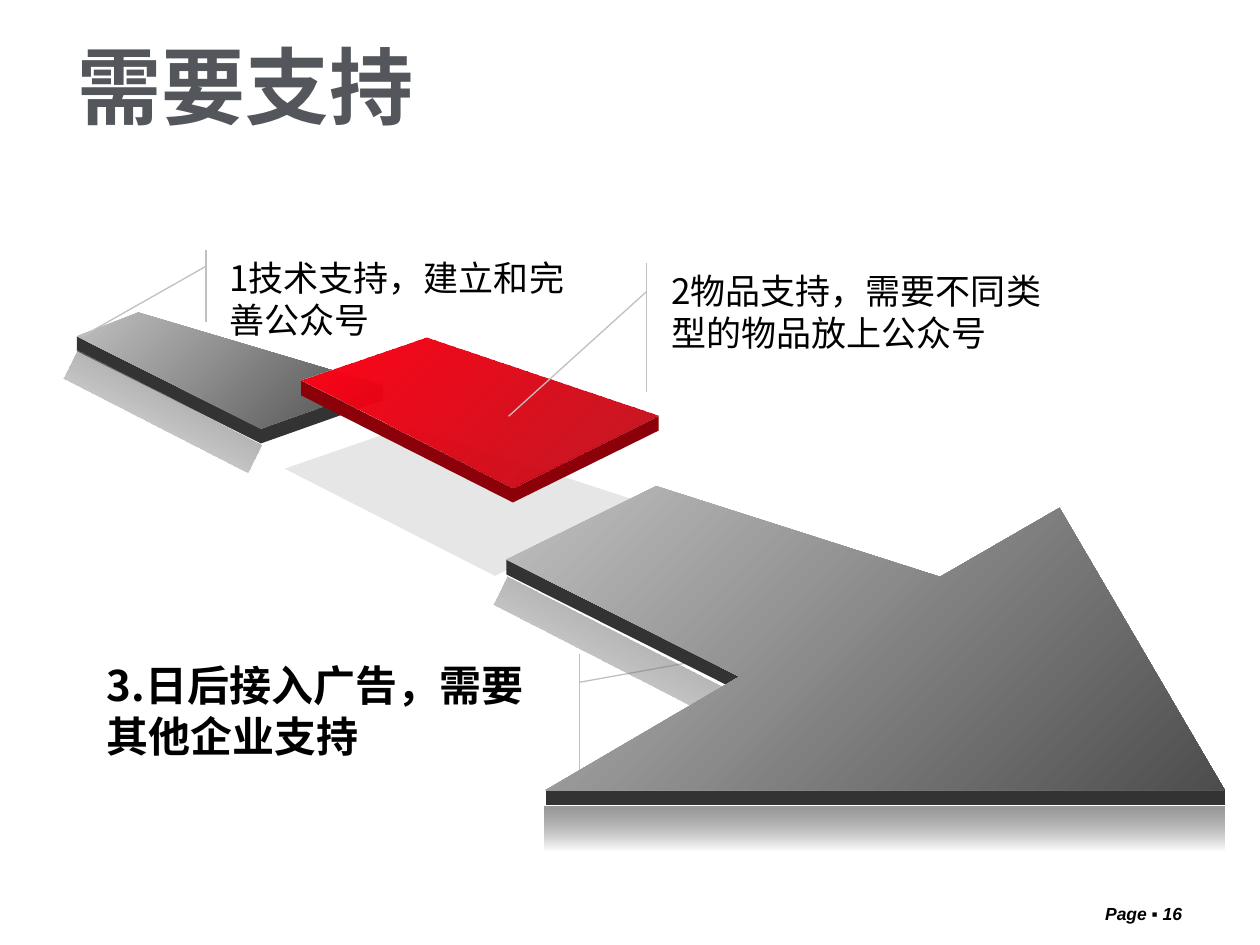
from lxml import etree
from pptx import Presentation
from pptx.dml.color import RGBColor
from pptx.enum.shapes import MSO_SHAPE
from pptx.enum.text import MSO_ANCHOR, MSO_AUTO_SIZE, PP_ALIGN
from pptx.oxml.ns import qn
from pptx.util import Cm, Pt

RECT = MSO_SHAPE.RECTANGLE
CALLOUT = MSO_SHAPE.LINE_CALLOUT_1_ACCENT_BAR
LEFT, RIGHT = PP_ALIGN.LEFT, PP_ALIGN.RIGHT
TOP, MIDDLE = MSO_ANCHOR.TOP, MSO_ANCHOR.MIDDLE

THEME = {
    "han": "Noto Sans CJK JP", "latin": "Arial",
    "title": 48, "note": 20, "strong": 24, "foot": 10,
    "head": "53575C", "ink": "000000", "line": "C0C0C0",
    # gradient stops: position, colour, opacity in percent
    "grey": [(0, "C0C0C0", 100), (100, "4D4D4D", 100)],
    "red": [(0, "FF0517", 100), (100, "BC000D", 90)],
    "fade": [(0, "5F5F5F", 0), (100, "969696", 100)],
    "floor": [(0, "C0C0C0", 38), (100, "C0C0C0", 38)],
    "grey side": "333333", "red side": "8B0009",
}

TITLE = ("需要支持", (1.3, 0.89, 16.2, 1.65))
FOOT = ("Page ▪ 16", (20.09, 18.14, 3.99, 0.56))

# Top faces in cm, from the left corner along the front edge and back
STEP_1 = [(1.55, 6.78), (5.26, 8.64), (7.72, 7.77), (2.79, 6.3)]
STEP_2 = [(6.07, 7.67), (10.34, 9.83), (13.28, 8.38), (8.59, 6.81)]
FLOOR = [(5.74, 9.45), (9.98, 11.61), (12.95, 10.13), (8.23, 8.59)]
ARROW = [(10.21, 11.28), (14.91, 13.64), (11, 15.93), (24.69, 15.93),
         (21.36, 10.24), (18.95, 11.63), (13.23, 9.8)]
THICK = 0.3

# Box and turn of each reflection
GLOW_1 = ((1.19, 7.98, 4.17, 0.64), 207)
GLOW_2 = ((9.8, 12.83, 5.46, 0.64), 207)
GLOW_3 = ((10.97, 16.26, 13.72, 0.89), 180)

# Text, box, pointer (y, x, y, x as shares of the box), size, bold
RIGHTWARD = (0.22, -0.03, 1.19, -0.37)
NOTES = [
    ("1技术支持，建立和完善公众号", (4.37, 5.05, 7.29, 1.45),
     (0.22, -0.03, 1.19, -0.37), "note", False),
    ("2物品支持，需要不同类型的物品放上公众号", (13.28, 5.31, 8.18, 2.59),
     (0.22, -0.03, 1.19, -0.37), "note", False),
    ("3.日后接入广告，需要其他企业支持", (1.9, 13.18, 9.4, 2.62),
     (0.22, 1.04, 0.02, 1.35), "strong", True),
]
NOTES = [n for n in NOTES]


def rgb(name):
    return RGBColor.from_string(THEME[name])


def blend(shape, name, angle):
    """Fill with a linear gradient whose stops may be transparent."""
    shape.fill.gradient()
    grad = shape._element.spPr.find(qn("a:gradFill"))
    stops = grad.find(qn("a:gsLst"))
    for old in list(stops):
        stops.remove(old)
    for place, color, solid in THEME[name]:
        stop = etree.SubElement(stops, qn("a:gs"), pos=str(place * 1000))
        tint = etree.SubElement(stop, qn("a:srgbClr"), val=color)
        if solid < 100:
            etree.SubElement(tint, qn("a:alpha"), val=str(solid * 1000))
    grad.find(qn("a:lin")).set("ang", str(angle * 60000))


def face(slide, points):
    dots = [(Cm(x), Cm(y)) for x, y in points]
    pen = slide.shapes.build_freeform(*dots[0])
    pen.add_line_segments(dots[1:], close=True)
    shape = pen.convert_to_shape()
    shape.shadow.inherit = False
    shape.line.fill.background()
    return shape


def slab(slide, points, name):
    """Draw a top face over the sides below its rightward edges."""
    for (x1, y1), (x2, y2) in zip(points, points[1:]):
        if x2 > x1:
            side = face(slide, [(x1, y1), (x2, y2),
                                (x2, y2 + THICK), (x1, y1 + THICK)])
            side.fill.solid()
            side.fill.fore_color.rgb = rgb(name + " side")
    blend(face(slide, points), name, 45)


def glow(slide, box, turn):
    shape = slide.shapes.add_shape(RECT, *map(Cm, box))
    shape.shadow.inherit = False
    shape.line.fill.background()
    shape.rotation = turn
    blend(shape, "fade", 90)


def write(shape, text, size, color="ink", face_name="han", bold=True,
          italic=False, align=LEFT, anchor=TOP):
    frame = shape.text_frame
    frame.word_wrap = True
    frame.auto_size = MSO_AUTO_SIZE.NONE
    frame.vertical_anchor = anchor
    frame.text = text
    para = frame.paragraphs[0]
    para.alignment = align
    font = para.font
    font.size, font.bold, font.italic = Pt(THEME[size]), bold, italic
    font.color.rgb = rgb(color)
    font.name = THEME[face_name]
    east = etree.Element(qn("a:ea"), typeface=THEME[face_name])
    font._element.find(qn("a:latin")).addnext(east)


def note(slide, text, box, pointer, size, bold):
    shape = slide.shapes.add_shape(CALLOUT, *map(Cm, box))
    shape.shadow.inherit = False
    shape.fill.background()
    shape.line.color.rgb = rgb("line")
    shape.line.width = Pt(0.75)
    for i, share in enumerate(pointer):
        shape.adjustments[i] = share
    write(shape, text, size, bold=bold)


def main():
    deck = Presentation()
    deck.slide_width, deck.slide_height = Cm(25.4), Cm(19.05)
    slide = deck.slides.add_slide(deck.slide_layouts[5])

    text, box = TITLE
    title = slide.shapes.title
    title.left, title.top, title.width, title.height = map(Cm, box)
    write(title, text, "title", "head", anchor=MIDDLE)

    text, box = FOOT
    foot = slide.shapes.add_textbox(*map(Cm, box))
    write(foot, text, "foot", face_name="latin", italic=True,
          align=RIGHT, anchor=MIDDLE)

    slab(slide, STEP_1, "grey")
    glow(slide, *GLOW_1)
    blend(face(slide, FLOOR), "floor", 0)
    slab(slide, STEP_2, "red")
    for item in NOTES:
        note(slide, *item)
    glow(slide, *GLOW_2)
    slab(slide, ARROW, "grey")
    glow(slide, *GLOW_3)
    deck.save("out.pptx")


if __name__ == "__main__":
    main()
